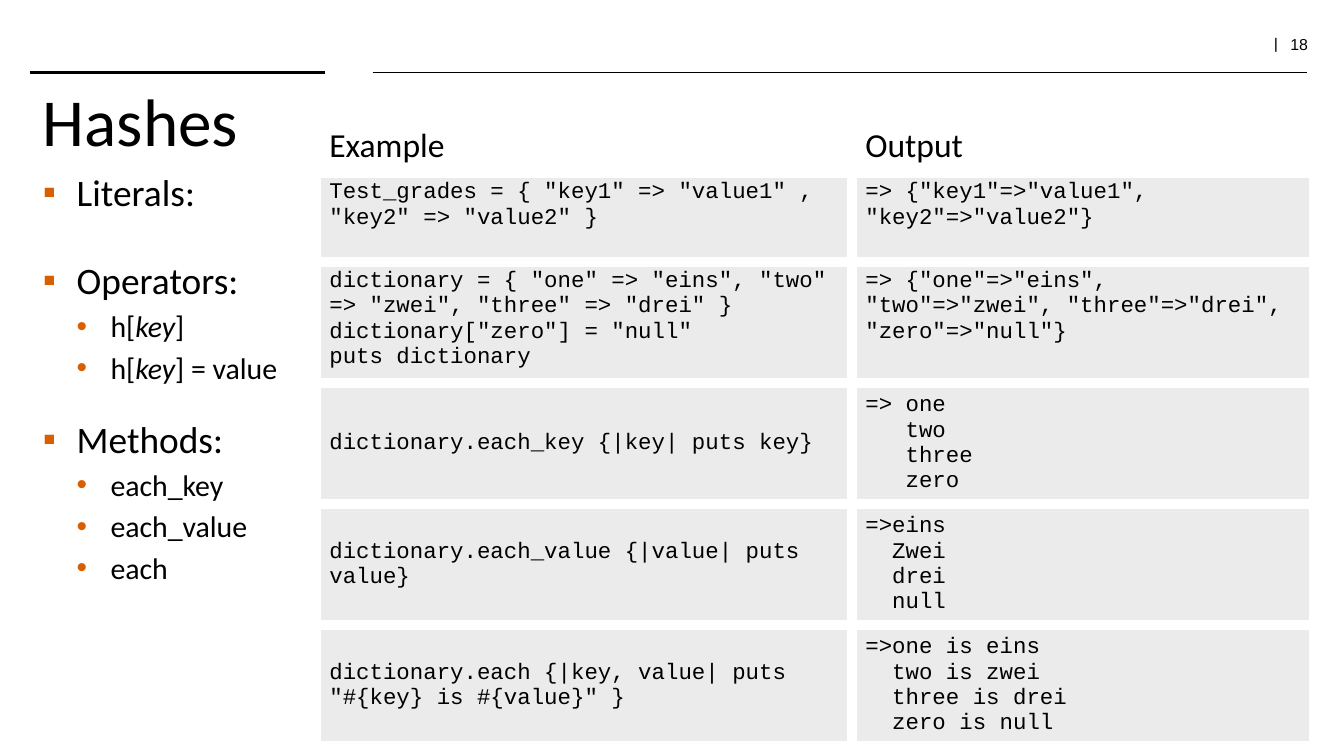
"""Build the Hashes slide with its bullet list and code table."""
from lxml.etree import SubElement
from pptx import Presentation
from pptx.dml.color import RGBColor
from pptx.enum.shapes import MSO_CONNECTOR
from pptx.enum.text import MSO_ANCHOR, PP_ALIGN
from pptx.oxml import parse_xml
from pptx.oxml.ns import nsdecls, qn
from pptx.util import Cm, Pt

BLACK = RGBColor(0x00, 0x00, 0x00)
WHITE = RGBColor(0xFF, 0xFF, 0xFF)
GREY = RGBColor(0xEB, 0xEB, 0xEB)
ORANGE = RGBColor(0xD9, 0x5E, 0x00)

TITLE = "Hashes"
PAGE = [("|  ", "TeX Gyre Schola", 9), ("18", "Arial", 8.5)]
RULES = [(0.56, 6.15, 2), (7.04, 24.71, 1)]
RULE_Y = 1.37

# level, space before in points, runs as (text, italic)
BULLETS = [
    (0, 0, [("Literals:", False)]),
    (0, 23.5, [("Operators:", False)]),
    (1, 3, [("h[", False), ("key", True), ("]", False)]),
    (1, 3, [("h[", False), ("key", True), ("] = value", False)]),
    (0, 16.5, [("Methods:", False)]),
    (1, 3, [("each_key", False)]),
    (1, 3, [("each_value", False)]),
    (1, 3, [("each", False)]),
]
LEVELS = [("▪", 20), ("•", 16)]
INDENT = 0.64

HEADER = ("Example", "Output")
TOP, MIDDLE = MSO_ANCHOR.TOP, MSO_ANCHOR.MIDDLE
CODE = [
    (1.68, TOP,
     'Test_grades = { "key1" => "value1" , "key2" => "value2" }',
     '=> {"key1"=>"value1", "key2"=>"value2"}'),
    (2.17, TOP,
     'dictionary = { "one" => "eins", "two" => "zwei", "three" => "drei" }\n'
     'dictionary["zero"] = "null"\nputs dictionary',
     '=> {"one"=>"eins", "two"=>"zwei", "three"=>"drei", "zero"=>"null"}'),
    (2.17, MIDDLE, "dictionary.each_key {|key| puts key}",
     "=> one\n   two\n   three\n   zero"),
    (2.17, MIDDLE, "dictionary.each_value {|value| puts value}",
     "=>eins\n  Zwei\n  drei\n  null"),
    (2.17, MIDDLE,
     'dictionary.each {|key, value| puts "#{key} is #{value}" }',
     "=>one is eins\n  two is zwei\n  three is drei\n  zero is null"),
]
HEADER_H = 1.04
COL_W = (10.13, 8.74)


def style(r, font, size, italic=False):
    r.font.name, r.font.size, r.font.italic = font, Pt(size), italic
    r.font.color.rgb = BLACK


def add_run(p, text, font, size, italic=False):
    r = p.add_run()
    r.text = text
    style(r, font, size, italic)


def add_box(s, x, y, w, h):
    tf = s.shapes.add_textbox(Cm(x), Cm(y), Cm(w), Cm(h)).text_frame
    tf.word_wrap = True
    return tf


def add_rule(s, x1, x2, width):
    ln = s.shapes.add_connector(MSO_CONNECTOR.STRAIGHT, Cm(x1), Cm(RULE_Y), Cm(x2), Cm(RULE_Y))
    ln.line.color.rgb = BLACK
    ln.line.width = Pt(width)
    SubElement(ln._element.spPr, qn("a:effectLst"))


def add_bullet(p, level, char):
    pPr = p._p.get_or_add_pPr()
    pPr.set("marL", str(Cm(INDENT * (level + 1))))
    pPr.set("indent", str(-Cm(INDENT)))
    color = SubElement(pPr, qn("a:buClr"))
    SubElement(color, qn("a:srgbClr"), val=str(ORANGE))
    SubElement(pPr, qn("a:buFont"), typeface="Arial")
    SubElement(pPr, qn("a:buChar"), char=char)


def fill_cell(cell, text, font, size, anchor, fill=None):
    cell.text_frame.text = text
    cell.vertical_anchor = anchor
    for p in cell.text_frame.paragraphs:
        for r in p.runs:
            style(r, font, size)
    if fill is None:
        cell.fill.background()
    else:
        cell.fill.solid()
        cell.fill.fore_color.rgb = fill
    for i, side in enumerate("LRTB"):
        cell._tc.get_or_add_tcPr().insert(i, parse_xml(
            f'<a:ln{side} {nsdecls("a")} w="{Pt(6)}"><a:solidFill>'
            f'<a:srgbClr val="{WHITE}"/></a:solidFill></a:ln{side}>'))


def add_code_table(s):
    height = HEADER_H + sum(row[0] for row in CODE)
    tbl = s.shapes.add_table(len(CODE) + 1, len(COL_W), Cm(5.97), Cm(2.24),
                             Cm(sum(COL_W)), Cm(height)).table
    tbl.first_row = tbl.horz_banding = False
    for col, w in zip(tbl.columns, COL_W):
        col.width = Cm(w)
    tbl.rows[0].height = Cm(HEADER_H)
    for c, text in enumerate(HEADER):
        fill_cell(tbl.cell(0, c), text, "Calibri", 18, TOP)
    for i, (h, anchor, *texts) in enumerate(CODE, 1):
        tbl.rows[i].height = Cm(h)
        for c, text in enumerate(texts):
            fill_cell(tbl.cell(i, c), text, "Courier New", 12, anchor, GREY)


def main():
    prs = Presentation()
    prs.slide_width, prs.slide_height = Cm(25.4), Cm(14.29)
    s = prs.slides.add_slide(prs.slide_layouts[6])

    p = add_box(s, 22.38, 0.58, 2.59, 0.56).paragraphs[0]
    p.alignment = PP_ALIGN.RIGHT
    p.line_spacing = 0.8
    for run in PAGE:
        add_run(p, *run)

    for rule in RULES:
        add_rule(s, *rule)

    add_run(add_box(s, 0.56, 1.37, 24.16, 1.45).paragraphs[0], TITLE, "Calibri", 36)

    tf = add_box(s, 0.56, 3.07, 15.27, 9.32)
    for i, (level, before, runs) in enumerate(BULLETS):
        p = tf.add_paragraph() if i else tf.paragraphs[0]
        char, size = LEVELS[level]
        p.level = level
        p.space_before = Pt(before)
        add_bullet(p, level, char)
        for text, italic in runs:
            add_run(p, text, "Calibri", size, italic)

    add_code_table(s)
    prs.save("out.pptx")


if __name__ == "__main__":
    main()
